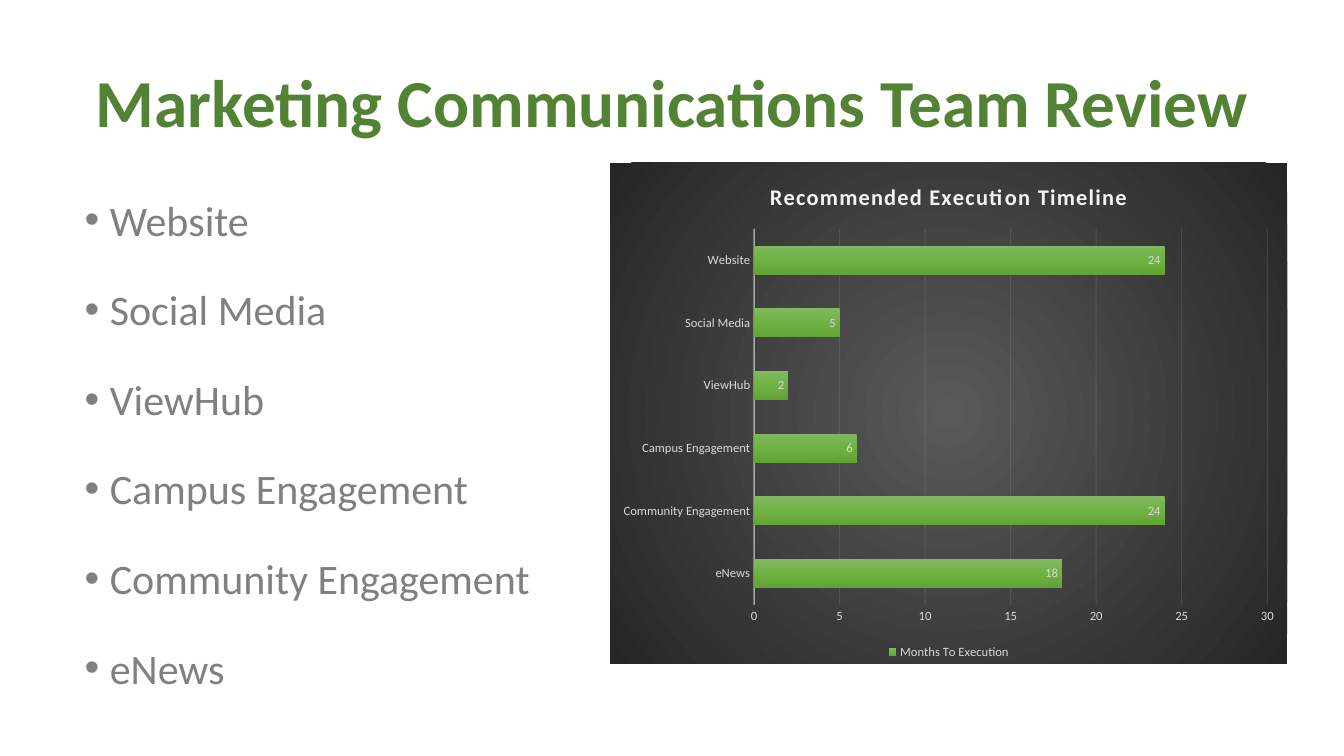
from lxml import etree
from pptx import Presentation
from pptx.chart.data import CategoryChartData
from pptx.dml.color import RGBColor
from pptx.enum.chart import XL_CHART_TYPE, XL_LABEL_POSITION, XL_LEGEND_POSITION, XL_TICK_MARK
from pptx.enum.text import MSO_ANCHOR, MSO_AUTO_SIZE, PP_ALIGN
from pptx.oxml import parse_xml
from pptx.oxml.ns import qn
from pptx.util import Pt

PX = 9525
FONT = "Calibri"
GREEN = RGBColor(0x54, 0x82, 0x35)
GRAY = RGBColor(0x80, 0x80, 0x80)
BLACK = RGBColor(0x00, 0x00, 0x00)
PALE = RGBColor(0xF2, 0xF2, 0xF2)
LABEL = RGBColor(0xD9, 0xD9, 0xD9)
PANEL_STOPS = [(0, RGBColor(0x59, 0x59, 0x59)), (100, RGBColor(0x26, 0x26, 0x26))]
BAR_STOPS = [(0, RGBColor(0x81, 0xB8, 0x61)), (50, RGBColor(0x6F, 0xB2, 0x42)),
             (100, RGBColor(0x62, 0xA3, 0x36))]
LINEAR = '<a:lin ang="5400000" scaled="0"/>'
RADIAL = ('<a:path path="circle"><a:fillToRect l="50000" t="50000" r="50000" b="50000"/>'
          '</a:path>')
NS = ('xmlns:a="http://schemas.openxmlformats.org/drawingml/2006/main" '
      'xmlns:c="http://schemas.openxmlformats.org/drawingml/2006/chart"')
MONTHS = [("Website", 24), ("Social Media", 5), ("ViewHub", 2),
          ("Campus Engagement", 6), ("Community Engagement", 24), ("eNews", 18)]


def place(sp, x, y, w, h):
    """Move and size a shape in px."""
    sp.left, sp.top, sp.width, sp.height = (v * PX for v in (x, y, w, h))


def style_font(font, size, color, bold=False):
    """Set the face, size, colour and weight of a font."""
    font.name, font.size, font.bold = FONT, Pt(size), bold
    font.color.rgb = color


def gradient_props(stops, shading):
    """Return chart shape properties with a gradient fill and no line."""
    gs = "".join(f'<a:gs pos="{pos * 1000}"><a:srgbClr val="{color}"/></a:gs>'
                 for pos, color in stops)
    return parse_xml(f'<c:spPr {NS}><a:gradFill rotWithShape="1"><a:gsLst>{gs}</a:gsLst>'
                     f'{shading}</a:gradFill><a:ln><a:noFill/></a:ln></c:spPr>')


def style_line(line, width, opacity):
    """Draw a pale line with the given opacity in percent."""
    line.width = Pt(width)
    line.color.rgb = PALE
    color = next(line._ln.iter(qn("a:srgbClr")))
    etree.SubElement(color, qn("a:alpha")).set("val", str(opacity * 1000))


def add_title(s, text):
    """Fill the title placeholder."""
    sp = s.shapes.title
    place(sp, -2, 27, 1284, 148)
    tf = sp.text_frame
    tf.text = text
    tf.auto_size = MSO_AUTO_SIZE.NONE
    tf.vertical_anchor = MSO_ANCHOR.MIDDLE
    p = tf.paragraphs[0]
    p.alignment = PP_ALIGN.CENTER
    p.line_spacing = 0.9
    style_font(p.runs[0].font, 48, GREEN, True)


def add_list(s, items):
    """Fill the body placeholder with bullets."""
    sp = s.placeholders[1]
    place(sp, 71, 156, 464, 500)
    tf = sp.text_frame
    tf.text = "\n".join(items)
    tf.auto_size = MSO_AUTO_SIZE.NONE
    tf.vertical_anchor = MSO_ANCHOR.TOP
    for p in tf.paragraphs:
        p.line_spacing = 1.5
        p.space_before = Pt(10)
        pPr = p._p.get_or_add_pPr()
        pPr.set("marL", str(24 * PX))
        pPr.set("indent", str(-24 * PX))
        etree.SubElement(pPr, qn("a:buFont")).set("typeface", "Arial")
        etree.SubElement(pPr, qn("a:buChar")).set("char", "•")
        style_font(p.runs[0].font, 30, GRAY)


def style_axes(chart):
    """Format the category and value axes."""
    cat, val = chart.category_axis, chart.value_axis
    for axis in (cat, val):
        axis.major_tick_mark = axis.minor_tick_mark = XL_TICK_MARK.NONE
        style_font(axis.tick_labels.font, 9, LABEL)
    style_line(cat.format.line, 1, 54)
    val.format.line.fill.background()
    val.minimum_scale, val.maximum_scale, val.major_unit = 0, 30, 5
    style_line(val.major_gridlines.format.line, 0.75, 10)


def style_bars(plot):
    """Format the bars and their value labels."""
    plot.gap_width, plot.overlap, plot.vary_by_categories = 115, -20, False
    ser = plot.series[0]
    bar_props = ser._element.get_or_add_spPr()
    bar_props.getparent().replace(bar_props, gradient_props(BAR_STOPS, LINEAR))
    labels = ser.data_labels
    labels.show_value = True
    labels.position = XL_LABEL_POSITION.INSIDE_END
    style_font(labels.font, 9, LABEL)


def add_timeline(s, title, name, rows):
    """Add the bar chart on its dark panel."""
    data = CategoryChartData()
    data.categories = [label for label, _ in rows]
    data.add_series(name, [months for _, months in rows])
    frame = s.shapes.add_chart(XL_CHART_TYPE.BAR_CLUSTERED, 0, 0, PX, PX, data)
    place(frame, 581, 155, 645, 477)
    chart = frame.chart
    style_font(chart.font, 10, BLACK)
    chart._chartSpace.find(qn("c:txPr")).addprevious(gradient_props(PANEL_STOPS, RADIAL))
    chart.has_title = True
    tf = chart.chart_title.text_frame
    tf.text = title
    r = tf.paragraphs[0].runs[0]
    style_font(r.font, 16, PALE, True)
    r._r.get_or_add_rPr().set("spc", "100")
    chart.has_legend = True
    chart.legend.position = XL_LEGEND_POSITION.BOTTOM
    chart.legend.include_in_layout = False
    style_font(chart.legend.font, 9, LABEL)
    style_axes(chart)
    style_bars(chart.plots[0])


def main():
    """Build the slide."""
    prs = Presentation()
    prs.slide_width, prs.slide_height = 1280 * PX, 720 * PX
    s = prs.slides.add_slide(prs.slide_layouts[1])
    add_title(s, "Marketing Communications Team Review")
    add_list(s, [label for label, _ in MONTHS])
    add_timeline(s, "Recommended Execution Timeline", "Months To Execution", MONTHS[::-1])
    prs.save("out.pptx")


if __name__ == "__main__":
    main()
